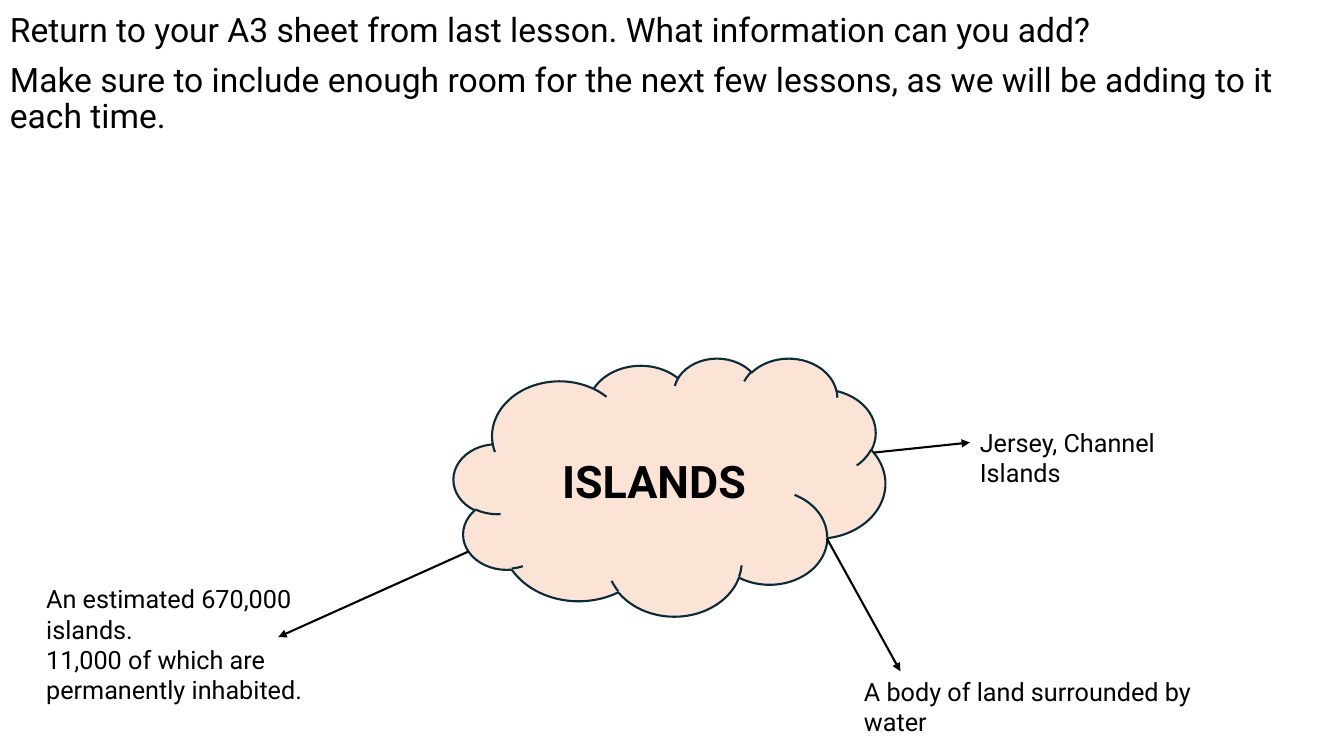
from pptx import Presentation
from pptx.dml.color import RGBColor
from pptx.enum.shapes import MSO_CONNECTOR as Connector, MSO_SHAPE as Preset
from pptx.enum.text import MSO_ANCHOR as Anchor, PP_ALIGN as Align
from pptx.oxml.ns import qn
from pptx.util import Pt
from lxml.etree import SubElement

EMU_PER_PX = 9144
BLACK = RGBColor(0x00, 0x00, 0x00)
PEACH = RGBColor(0xFB, 0xE3, 0xD6)
NAVY = RGBColor(0x09, 0x2A, 0x39)

INSTRUCTIONS = [
    "Return to your A3 sheet from last lesson. What information can you add?",
    "Make sure to include enough room for the next few lessons, "
    "as we will be adding to it each time.",
]
FACTS = [
    ((962, 419, 274, 40), ["Jersey, Channel Islands"]),
    ((847, 666, 402, 40), ["A body of land surrounded by water"]),
    ((36, 574, 303, 131), ["An estimated 670,000 islands.",
                           "11,000 of which are permanently inhabited."]),
]
ARROWS = [
    (465, 547, 276, 632),
    (867, 449, 962, 439),
    (820, 534, 893, 666),
]


def px(*lengths):
    return [length * EMU_PER_PX for length in lengths]


class MindMap:
    font = "Roboto"
    line_width = Pt(1.5)

    def __init__(self, page):
        self.page = page

    def set_text(self, frame, lines, size, bold=False):
        frame.word_wrap = True
        frame.text = "\n".join(lines)
        for para in frame.paragraphs:
            for span in para.runs:
                span.font.name = self.font
                span.font.size = Pt(size)
                span.font.bold = bold
                span.font.color.rgb = BLACK

    def text(self, area, lines, size):
        box = self.page.shapes.add_textbox(*px(*area))
        self.set_text(box.text_frame, lines, size)
        return box

    def instructions(self, area, lines):
        box = self.text(area, lines, 24)
        for para in box.text_frame.paragraphs:
            para.line_spacing = 0.9
            para.space_before = Pt(10)

    def cloud(self, area, title):
        cloud = self.page.shapes.add_shape(Preset.CLOUD, *px(*area))
        cloud.shadow.inherit = False
        cloud.fill.solid()
        cloud.fill.fore_color.rgb = PEACH
        cloud.line.color.rgb = NAVY
        cloud.line.width = self.line_width
        self.set_text(cloud.text_frame, [title], 32, bold=True)
        cloud.text_frame.vertical_anchor = Anchor.MIDDLE
        cloud.text_frame.paragraphs[0].alignment = Align.CENTER

    def arrow(self, ends):
        arrow = self.page.shapes.add_connector(Connector.STRAIGHT, *px(*ends))
        arrow.line.color.rgb = BLACK
        arrow.line.width = self.line_width
        properties = arrow.element.spPr
        SubElement(properties.find(qn("a:ln")), qn("a:tailEnd"), type="triangle")
        SubElement(properties, qn("a:effectLst"))


def main():
    deck = Presentation()
    deck.slide_width, deck.slide_height = px(1333, 750)
    mind_map = MindMap(deck.slides.add_slide(deck.slide_layouts[6]))
    mind_map.instructions((0, 8, 1305, 642), INSTRUCTIONS)
    mind_map.cloud((450, 355, 428, 256), "ISLANDS")
    for area, lines in FACTS:
        mind_map.text(area, lines, 18)
    for ends in ARROWS:
        mind_map.arrow(ends)
    deck.save("out.pptx")


if __name__ == "__main__":
    main()
